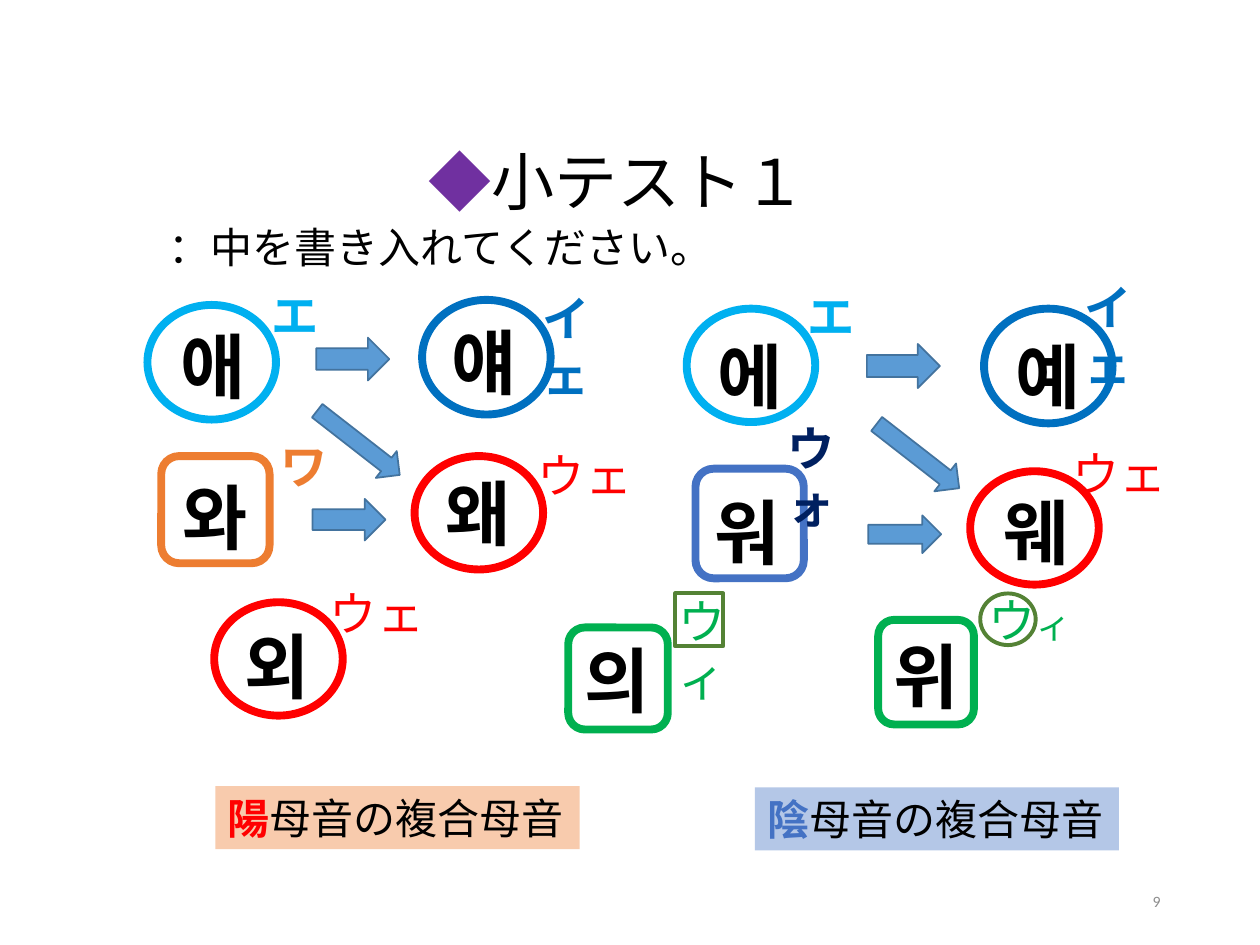
from pptx import Presentation
from pptx.dml.color import RGBColor
from pptx.enum import shapes, text
from pptx.util import Inches, Pt

BLACK = RGBColor(0, 0, 0)
GREY = RGBColor(0x8C, 0x8C, 0x8C)
PURPLE = RGBColor(0x70, 0x30, 0xA0)
RED = RGBColor(0xFF, 0, 0)
SKY = RGBColor(0, 0xB0, 0xF0)
BLUE = RGBColor(0, 0x70, 0xC0)
NAVY = RGBColor(0, 0x20, 0x60)
INDIGO = RGBColor(0x44, 0x72, 0xC4)
ORANGE = RGBColor(0xED, 0x7D, 0x31)
GREEN = RGBColor(0, 0xB0, 0x50)
OLIVE = RGBColor(0x54, 0x82, 0x35)
STEEL = RGBColor(0x5B, 0x9B, 0xD5)
EDGE = RGBColor(0x43, 0x73, 0x9E)
PEACH = RGBColor(0xF8, 0xCB, 0xAD)
PALE = RGBColor(0xB4, 0xC7, 0xE7)

FORM = shapes.MSO_SHAPE
LEFT, MID, RIGHT = text.PP_ALIGN.LEFT, text.PP_ALIGN.CENTER, text.PP_ALIGN.RIGHT
OVAL, ROUND = FORM.OVAL, FORM.ROUNDED_RECTANGLE
CJK = "Noto Sans CJK JP"

# letter, font, alignment, letter box
LETTERS = [
    ("애", "Arial", MID, (0.9, 2.51, 1.59, 0.78)),
    ("에", "Arial", MID, (5.34, 2.59, 1.22, 0.78)),
    ("얘", "Arial", MID, (3.05, 2.48, 1.59, 0.78)),
    ("예", "Arial", MID, (7.5, 2.59, 1.64, 0.78)),
    ("와", "Arial", LEFT, (1.35, 3.71, 1.66, 0.78)),
    ("워", "Arial", LEFT, (5.57, 3.83, 1.58, 0.78)),
    ("왜", "Arial", LEFT, (3.44, 3.68, 0.97, 0.78)),
    ("웨", "Arial", LEFT, (7.87, 3.83, 1.53, 0.78)),
    ("외", CJK, LEFT, (1.84, 4.89, 2.4, 0.78)),
    ("위", CJK, LEFT, (6.99, 4.97, 2.03, 0.78)),
    ("의", CJK, LEFT, (4.54, 5, 1.55, 1.46)),
]
# box, turn in degrees
ARROWS = [
    ((2.51, 2.68, 0.58, 0.34), 0), ((6.88, 2.73, 0.58, 0.35), 0),
    ((2.48, 3.96, 0.58, 0.33), 0), ((6.89, 4.09, 0.58, 0.3), 0),
    ((2.43, 3.38, 0.83, 0.27), 37.9), ((6.87, 3.48, 0.83, 0.28), 37.9),
]
RINGS = [
    (OVAL, SKY, (1.17, 2.42, 1.02, 0.91)), (OVAL, SKY, (5.45, 2.45, 1.02, 0.9)),
    (OVAL, RED, (1.7, 4.78, 1.02, 0.9)), (OVAL, RED, (3.29, 3.62, 1.02, 0.9)),
    (OVAL, RED, (7.7, 3.74, 1.02, 0.9)),
    (ROUND, GREEN, (4.51, 4.98, 0.79, 0.81)), (ROUND, GREEN, (6.97, 4.92, 0.76, 0.83)),
    (OVAL, BLUE, (3.35, 2.38, 1.02, 0.91)), (OVAL, BLUE, (7.81, 2.45, 1.02, 0.91)),
    (ROUND, ORANGE, (1.28, 3.62, 0.86, 0.85)), (ROUND, INDIGO, (5.52, 3.72, 0.86, 0.87)),
]
# reading, colour, bold, box
KANA = [
    ("エ", SKY, True, (2.06, 2.22, 0.71, 0.56)), ("エ", SKY, True, (6.31, 2.23, 0.71, 0.56)),
    ("ウェ", RED, False, (4.17, 3.49, 1.01, 0.56)),
    ("ウェ", RED, False, (8.41, 3.48, 1.01, 0.56)),
    ("ウェ", RED, False, (2.52, 4.59, 1.01, 0.56)),
    ("イェ", BLUE, True, (4.21, 2.25, 0.83, 0.56)),
    ("イェ", BLUE, True, (8.51, 2.16, 0.83, 0.56)),
    ("ワ", ORANGE, True, (2.13, 3.42, 0.92, 0.56)),
    ("ウォ", NAVY, True, (6.15, 3.28, 0.92, 0.56)),
]
LABELS = [
    ("陽", RED, PEACH, (1.71, 6.24, 2.89, 0.5)),
    ("陰", INDIGO, PALE, (5.99, 6.25, 2.89, 0.5)),
]
# runs of (text, size), reading box, frame form, frame box
MARKED = [
    ([("ウィ", 27)], (5.29, 4.65, 0.92, 1.01), FORM.RECTANGLE, (5.36, 4.71, 0.38, 0.42)),
    ([("ウ", 27), ("ィ", 20)], (7.75, 4.64, 0.92, 0.56), OVAL, (7.78, 4.71, 0.44, 0.41)),
]


def inch(box):
    return [Inches(n) for n in box]


def write(shape, runs, align=LEFT, font="Calibri", wrap=True):
    """Fill a shape with runs of (text, size, colour, bold)."""
    frame = shape.text_frame
    frame.word_wrap = wrap
    frame.vertical_anchor = text.MSO_ANCHOR.TOP
    para = frame.paragraphs[0]
    para.alignment = align
    for words, size, colour, bold in runs:
        run = para.add_run()
        run.text = words
        run.font.name = font
        run.font.size = Pt(size)
        run.font.bold = bold
        run.font.color.rgb = colour
    return frame


def note(host, box, runs, **style):
    return write(host.add_textbox(*inch(box)), runs, **style)


def draw(host, form, box, fill=None, line=None, width=1):
    shape = host.add_shape(form, *inch(box))
    shape.shadow.inherit = False
    if fill is None:
        shape.fill.background()
    else:
        shape.fill.solid()
        shape.fill.fore_color.rgb = fill
    if line is None:
        shape.line.fill.background()
    else:
        shape.line.color.rgb = line
        shape.line.width = Pt(width)
    return shape


def main():
    deck = Presentation()
    deck.slide_width, deck.slide_height = Inches(10), Inches(7.5)
    page = deck.slides.add_slide(deck.slide_layouts[6]).shapes

    title = note(page, (1.19, 1.17, 7.43, 0.6),
                 [("◆", 36, PURPLE, False), ("小テスト１", 36, BLACK, False)], align=MID)
    title.vertical_anchor = text.MSO_ANCHOR.MIDDLE
    title.margin_left = title.margin_right = Inches(0.07)
    title.margin_top = title.margin_bottom = Inches(0.04)
    title.paragraphs[0].line_spacing = 0.9
    note(page, (1.24, 1.71, 4.57, 0.5), [("：中を書き入れてください。", 24, BLACK, False)])

    for letter, font, align, box in LETTERS:
        note(page, box, [(letter, 40.5, BLACK, True)], align=align, font=font)
    for box, turn in ARROWS:
        draw(page, FORM.RIGHT_ARROW, box, STEEL, EDGE).rotation = turn
    for form, colour, box in RINGS:
        draw(page, form, box, line=colour, width=4.5)
    for words, colour, bold, box in KANA:
        note(page, box, [(words, 27, colour, bold)])
    for head, colour, fill, box in LABELS:
        write(draw(page, FORM.RECTANGLE, box, fill),
              [(head, 24, colour, True), ("母音の複合母音", 24, BLACK, False)], wrap=False)
    for runs, box, form, edge in MARKED:
        group = page.add_group_shape().shapes
        note(group, box, [(words, size, GREEN, False) for words, size in runs])
        draw(group, form, edge, line=OLIVE, width=2.25)

    count = note(page, (7.06, 6.95, 2.25, 0.4), [("9", 9, GREY, False)], align=RIGHT)
    count.vertical_anchor = text.MSO_ANCHOR.MIDDLE
    deck.save("out.pptx")


if __name__ == "__main__":
    main()
